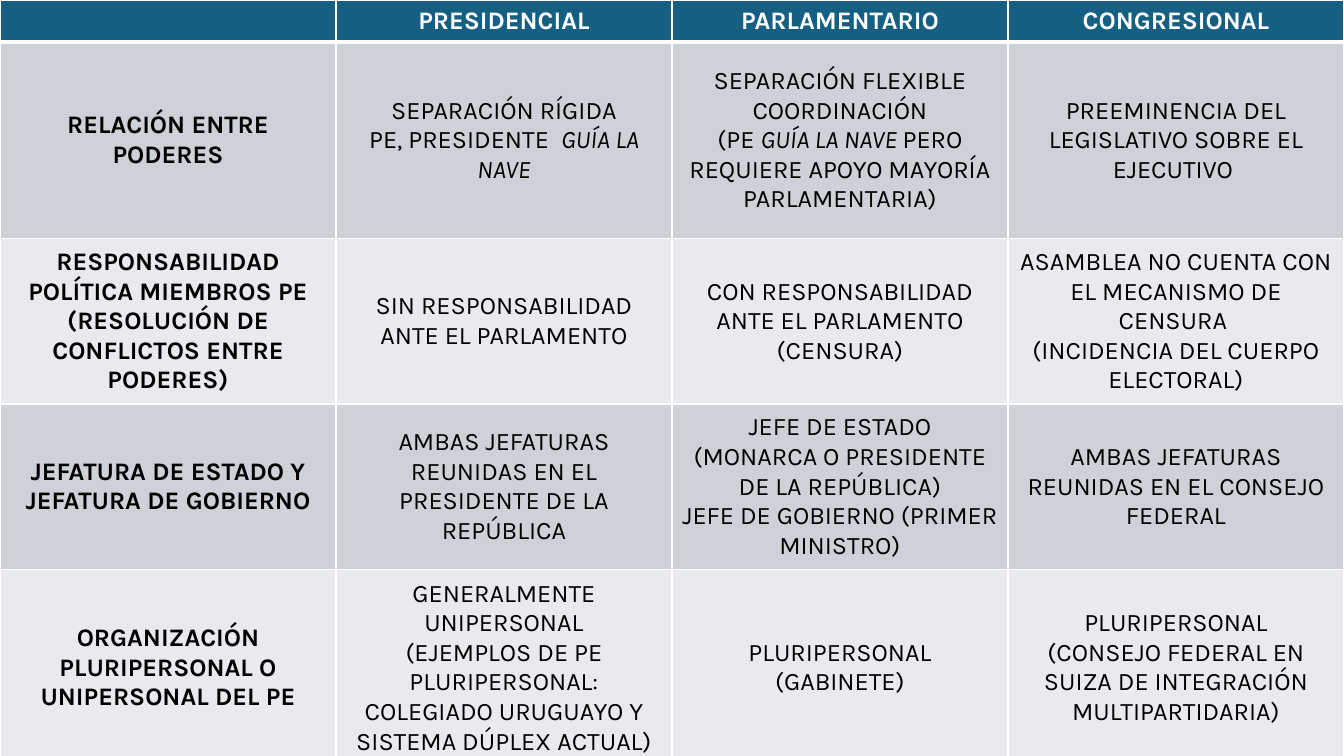
from dataclasses import dataclass

from lxml import etree
from pptx import Presentation
from pptx import util as u
from pptx.dml.color import RGBColor
from pptx.enum import text
from pptx.oxml.ns import qn

COLORS = {
    "head": "156082",
    "dark": "CCD2D8",
    "light": "E8EAED",
    "white": "FFFFFF",
    "black": "000000",
}
FONT = "Karla"
SIZE = 18
WIDTH, HEIGHT = 960, 540
THIN, THICK = 1, 3


@dataclass
class Row:
    """One table row; lines of a cell are split by newlines, *marks* are italic."""
    height: float
    fill: str
    ink: str
    cells: list[str]


ROWS = [
    Row(30, "head", "white", ["", "PRESIDENCIAL", "PARLAMENTARIO", "CONGRESIONAL"]),
    Row(140.4, "dark", "black", [
        "RELACIÓN ENTRE PODERES",
        "SEPARACIÓN RÍGIDA\nPE, PRESIDENTE  *GUÍA LA NAVE*",
        "SEPARACIÓN FLEXIBLE\nCOORDINACIÓN\n"
        "(PE *GUÍA LA NAVE *PERO REQUIERE APOYO MAYORÍA PARLAMENTARIA)",
        "PREEMINENCIA DEL LEGISLATIVO SOBRE EL EJECUTIVO ",
    ]),
    Row(118.2, "light", "black", [
        "RESPONSABILIDAD POLÍTICA MIEMBROS PE\n"
        "(RESOLUCIÓN DE CONFLICTOS ENTRE PODERES)",
        "SIN RESPONSABILIDAD ANTE EL PARLAMENTO",
        "CON RESPONSABILIDAD ANTE EL PARLAMENTO (CENSURA)",
        "ASAMBLEA NO CUENTA CON EL MECANISMO DE CENSURA \n"
        "(INCIDENCIA DEL CUERPO ELECTORAL)",
    ]),
    Row(118.2, "dark", "black", [
        "JEFATURA DE ESTADO Y JEFATURA DE GOBIERNO",
        "AMBAS JEFATURAS REUNIDAS EN EL PRESIDENTE DE LA REPÚBLICA",
        "JEFE DE ESTADO\n(MONARCA O PRESIDENTE DE LA REPÚBLICA)\n"
        "JEFE DE GOBIERNO (PRIMER MINISTRO)",
        "AMBAS JEFATURAS REUNIDAS EN EL CONSEJO FEDERAL",
    ]),
    Row(140.4, "light", "black", [
        "ORGANIZACIÓN PLURIPERSONAL O UNIPERSONAL DEL PE",
        "GENERALMENTE UNIPERSONAL\n"
        "(EJEMPLOS DE PE PLURIPERSONAL: COLEGIADO URUGUAYO Y SISTEMA DÚPLEX ACTUAL)",
        "PLURIPERSONAL\n(GABINETE)",
        "PLURIPERSONAL\n(CONSEJO FEDERAL EN SUIZA DE INTEGRACIÓN MULTIPARTIDARIA)",
    ]),
]


def color(name: str) -> RGBColor:
    return RGBColor.from_string(COLORS[name])


def border(cell, top: float, bottom: float) -> None:
    props = cell._tc.get_or_add_tcPr()
    for side, width in (("L", THIN), ("R", THIN), ("T", top), ("B", bottom)):
        line = etree.SubElement(props, qn(f"a:ln{side}"), w=str(u.Pt(width)))
        fill = etree.SubElement(line, qn("a:solidFill"))
        etree.SubElement(fill, qn("a:srgbClr"), val=COLORS["white"])


def write(cell, words: str, ink: str, bold: bool) -> None:
    cell.vertical_anchor = text.MSO_ANCHOR.MIDDLE
    frame = cell.text_frame
    for i, line in enumerate(words.split("\n")):
        para = frame.add_paragraph() if i else frame.paragraphs[0]
        para.alignment = text.PP_ALIGN.CENTER
        for j, part in enumerate(line.split("*")):
            if not part:
                continue
            run = para.add_run()
            run.text = part
            font = run.font
            font.name, font.size = FONT, u.Pt(SIZE)
            font.bold, font.italic = bold, j % 2 == 1
            font.color.rgb = color(ink)


def build(slide) -> None:
    count = len(ROWS[0].cells)
    total = sum(row.height for row in ROWS)
    table = slide.shapes.add_table(
        len(ROWS), count, u.Pt(0), u.Pt(0), u.Pt(WIDTH), u.Pt(total)).table
    for col in table.columns:
        col.width = u.Pt(WIDTH / count)
    for r, row in enumerate(ROWS):
        table.rows[r].height = u.Pt(row.height)
        for c, words in enumerate(row.cells):
            cell = table.cell(r, c)
            border(cell, THICK if r == 1 else THIN, THICK if r == 0 else THIN)
            cell.fill.solid()
            cell.fill.fore_color.rgb = color(row.fill)
            write(cell, words, row.ink, r == 0 or c == 0)


def main() -> None:
    deck = Presentation()
    deck.slide_width, deck.slide_height = u.Pt(WIDTH), u.Pt(HEIGHT)
    build(deck.slides.add_slide(deck.slide_layouts[6]))
    deck.save("out.pptx")


if __name__ == "__main__":
    main()
